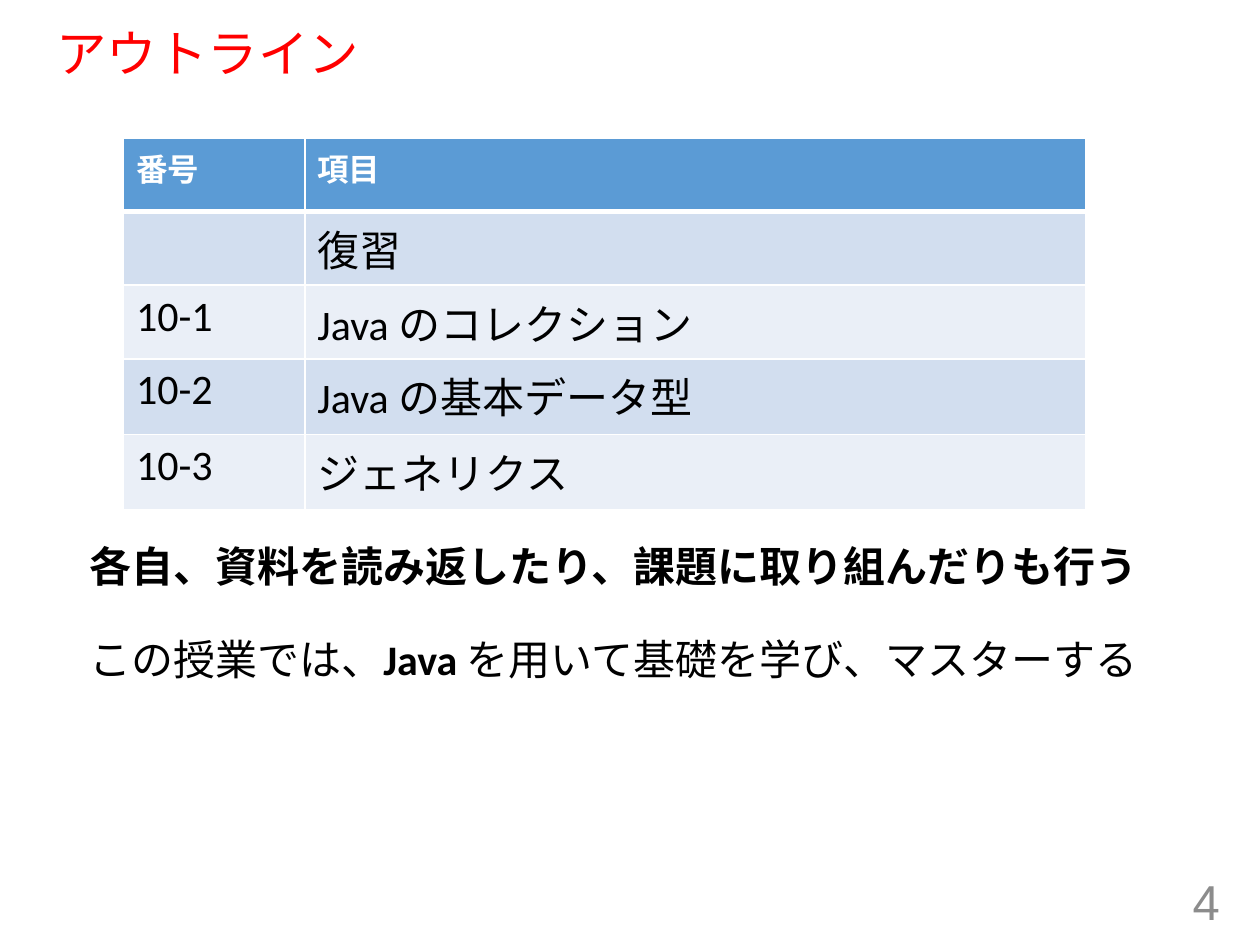
from dataclasses import dataclass

from lxml.etree import SubElement
from pptx import Presentation
from pptx.dml.color import RGBColor
from pptx.enum.text import MSO_ANCHOR as Anchor, PP_ALIGN as Align
from pptx.oxml.ns import qn
from pptx.util import Inches, Pt

COLORS = {
    "title": "FF0000",
    "number": "8C8C8C",
    "text": "000000",
    "white": "FFFFFF",
    "header": "5B9BD5",
    "band_dark": "D2DEEF",
    "band_light": "EAEFF7",
}
ROWS = [
    ("番号", "項目"),
    ("", "復習"),
    ("10-1", "Java のコレクション"),
    ("10-2", "Java の基本データ型"),
    ("10-3", "ジェネリクス"),
]
COL_WIDTHS = (1.44, 6.2)
ROW_HEIGHTS = (0.58, 0.47, 0.47, 0.6, 0.6)


@dataclass
class Label:
    box: tuple[float, float, float, float]
    runs: list[tuple[str, bool]]
    size: float = 24
    font: str = "Calibri"
    color: str = "text"
    anchor: Anchor = Anchor.TOP
    align: Align = Align.LEFT
    spacing: float = 1.0


LABELS = [
    Label((0.35, 0.19, 9.25, 0.51), [("アウトライン", False)], 28.8, "Arial",
          "title", Anchor.MIDDLE, spacing=0.9),
    Label((7.53, 6.95, 2.25, 0.4), [("4", False)], 28, "Arial",
          "number", Anchor.MIDDLE, Align.RIGHT),
    Label((0.61, 4.24, 8.62, 0.5),
          [("各自、資料を読み返したり、課題に取り組んだりも行う", True)]),
    Label((0.61, 4.98, 8.59, 0.5),
          [("この授業では、", False), ("Java ", True),
           ("を用いて基礎を学び、マスターする", False)]),
]


def style_font(font, name: str, size: float, color: str, bold: bool) -> None:
    """Set the face, size, colour and weight of a font."""
    font.name, font.size, font.bold = name, Pt(size), bold
    font.color.rgb = RGBColor.from_string(COLORS[color])


def add_label(s, label: Label) -> None:
    """Draw one text box."""
    sp = s.shapes.add_textbox(*map(Inches, label.box))
    tf = sp.text_frame
    tf.word_wrap = True
    tf.vertical_anchor = label.anchor
    p = tf.paragraphs[0]
    p.alignment, p.line_spacing = label.align, label.spacing
    for text, bold in label.runs:
        r = p.add_run()
        r.text = text
        style_font(r.font, label.font, label.size, label.color, bold)


def add_borders(cell, top: float, bottom: float) -> None:
    """Give a cell white borders, with widths in points."""
    props = cell._tc.get_or_add_tcPr()
    for side, width in zip("LRTB", (1, 1, top, bottom)):
        line = SubElement(props, qn(f"a:ln{side}"), w=str(Pt(width)))
        fill = SubElement(line, qn("a:solidFill"))
        SubElement(fill, qn("a:srgbClr"), val=COLORS["white"])


def add_outline_table(s) -> None:
    """Draw the banded table of lecture items."""
    table = s.shapes.add_table(
        len(ROWS), len(COL_WIDTHS), Inches(0.98), Inches(1.1),
        Inches(sum(COL_WIDTHS)), Inches(sum(ROW_HEIGHTS))).table
    for column, width in zip(table.columns, COL_WIDTHS):
        column.width = Inches(width)
    for i, (row, height, texts) in enumerate(zip(table.rows, ROW_HEIGHTS, ROWS)):
        row.height = Inches(height)
        head = i == 0
        band = "header" if head else "band_dark" if i % 2 else "band_light"
        for cell, text in zip(row.cells, texts):
            add_borders(cell, 3 if i == 1 else 1, 3 if head else 1)
            cell.fill.solid()
            cell.fill.fore_color.rgb = RGBColor.from_string(COLORS[band])
            cell.text_frame.text = text
            for r in cell.text_frame.paragraphs[0].runs:
                style_font(r.font, "Calibri", 18 if head else 24,
                           "white" if head else "text", head)


def main() -> None:
    """Build the outline slide."""
    prs = Presentation()
    prs.slide_width, prs.slide_height = Inches(10), Inches(7.5)
    s = prs.slides.add_slide(prs.slide_layouts[6])
    add_outline_table(s)
    for label in LABELS:
        add_label(s, label)
    prs.save("out.pptx")


if __name__ == "__main__":
    main()
